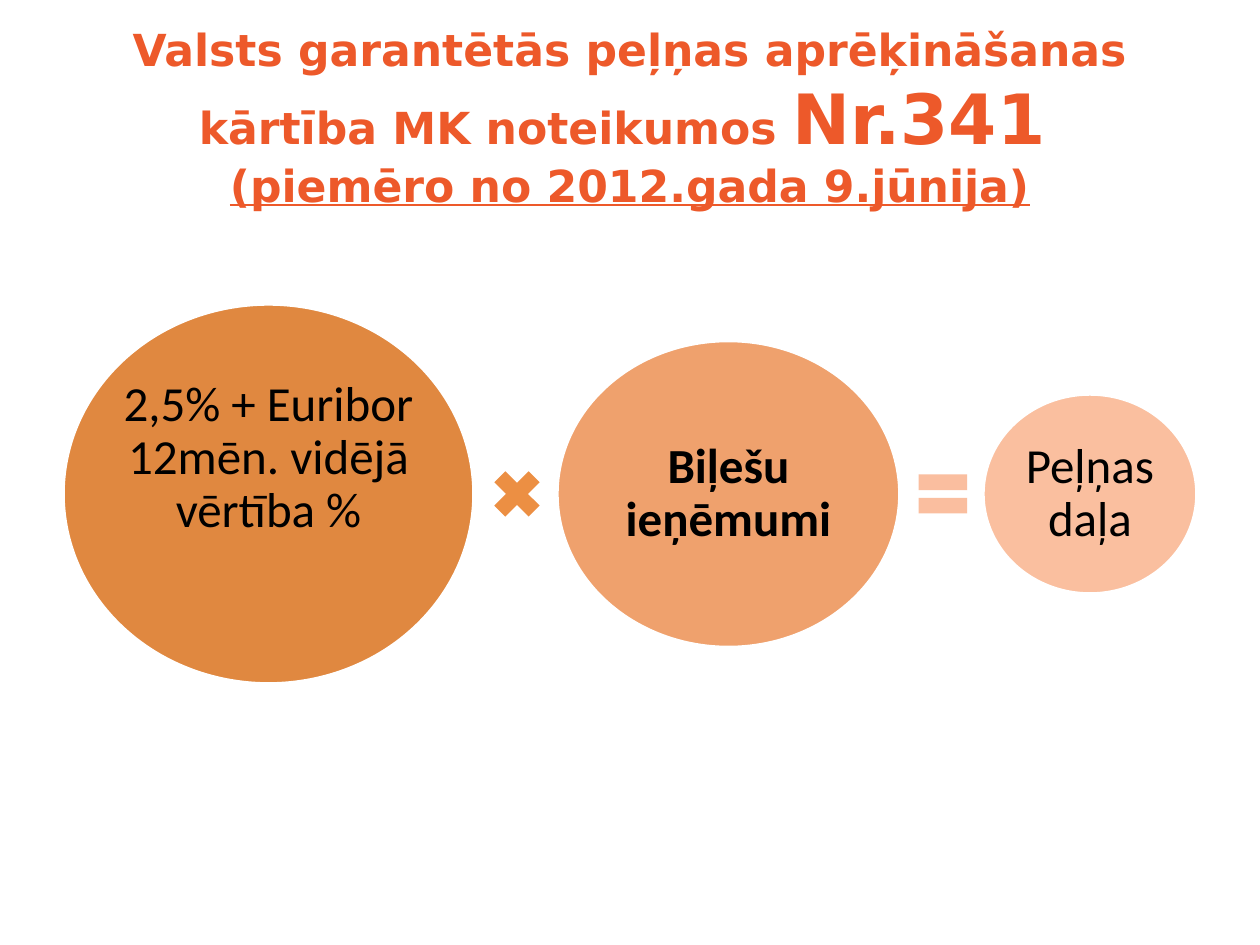
from pptx import Presentation
from pptx.dml.color import RGBColor
from pptx.enum.shapes import MSO_SHAPE as Shape
from pptx.enum.text import MSO_ANCHOR as Anchor, PP_ALIGN as Align
from pptx.util import Emu, Pt

PX_PER_INCH = 126
TITLE_COLOR = RGBColor(0xED, 0x59, 0x2A)
BLACK = RGBColor(0, 0, 0)
WHITE = RGBColor(0xFF, 0xFF, 0xFF)
ORANGE = RGBColor(0xE0, 0x88, 0x40)
TIMES_ORANGE = RGBColor(0xEC, 0x8F, 0x43)
LIGHT_ORANGE = RGBColor(0xEF, 0xA1, 0x6D)
EQUALS_PEACH = RGBColor(0xFA, 0xBE, 0x9F)
PEACH = RGBColor(0xFA, 0xBF, 0x9F)

MIDDLE_Y = 494
SIGN_SIZE = 66
GAP_BEFORE_SIGN, GAP_AFTER_SIGN = 10, 7


def px(length):
    return Emu(round(length * 914400 / PX_PER_INCH))


def add_title(page):
    box = page.shapes.add_textbox(px(63), px(38), px(1134), px(158))
    frame = box.text_frame
    frame.word_wrap = True
    frame.vertical_anchor = Anchor.MIDDLE
    para = frame.paragraphs[0]
    para.alignment = Align.CENTER
    para.font.name = "DejaVu Sans"
    para.font.bold = True
    para.font.color.rgb = TITLE_COLOR

    def add_span(text, size=25.2):
        span = para.add_run()
        span.text = text
        span.font.size = Pt(size)
        return span

    add_span("Valsts garantētās peļņas aprēķināšanas kārtība MK noteikumos ")
    add_span("Nr.341", 39.6)
    add_span(" ")
    para.add_line_break()
    add_span("(piemēro no 2012.gada 9.jūnija)").font.underline = True


def add_filled(page, kind, left, width, height, color):
    """Add a flat shape centred on the row of the equation."""
    shape = page.shapes.add_shape(
        kind, px(left), px(MIDDLE_Y - height / 2), px(width), px(height))
    shape.shadow.inherit = False
    shape.fill.solid()
    shape.fill.fore_color.rgb = color
    return shape


def add_term(page, left, width, height, color, text, bold=False, lift=0):
    """Add an ellipse with its text raised by lift above the middle."""
    shape = add_filled(page, Shape.OVAL, left, width, height, color)
    shape.line.color.rgb = WHITE
    shape.line.width = Pt(2)
    frame = shape.text_frame
    frame.word_wrap = True
    frame.vertical_anchor = Anchor.MIDDLE
    frame.margin_left = frame.margin_right = frame.margin_top = 0
    frame.margin_bottom = px(2 * lift)
    para = frame.paragraphs[0]
    para.text = text
    para.alignment = Align.CENTER
    para.line_spacing = 0.9
    para.font.name = "Calibri"
    para.font.size = Pt(28)
    para.font.bold = bold
    para.font.color.rgb = BLACK


def add_sign(page, kind, left, color):
    add_filled(page, kind, left, SIGN_SIZE, SIGN_SIZE, color).line.fill.background()


def add_equation(page):
    terms = [
        (411, 380, ORANGE, "2,5% + Euribor 12mēn. vidējā vērtība %", False, 35),
        (343, 307, LIGHT_ORANGE, "Biļešu ieņēmumi", True),
        (214, 200, PEACH, "Peļņas daļa"),
    ]
    signs = [(Shape.MATH_MULTIPLY, TIMES_ORANGE), (Shape.MATH_EQUAL, EQUALS_PEACH)]
    left = 63
    for index, term in enumerate(terms):
        add_term(page, left, *term)
        left += term[0] + GAP_BEFORE_SIGN
        if index < len(signs):
            kind, color = signs[index]
            add_sign(page, kind, left, color)
            left += SIGN_SIZE + GAP_AFTER_SIGN


def main():
    deck = Presentation()
    deck.slide_width, deck.slide_height = px(1260), px(945)
    page = deck.slides.add_slide(deck.slide_layouts[6])
    add_title(page)
    add_equation(page)
    deck.save("out.pptx")


if __name__ == "__main__":
    main()
